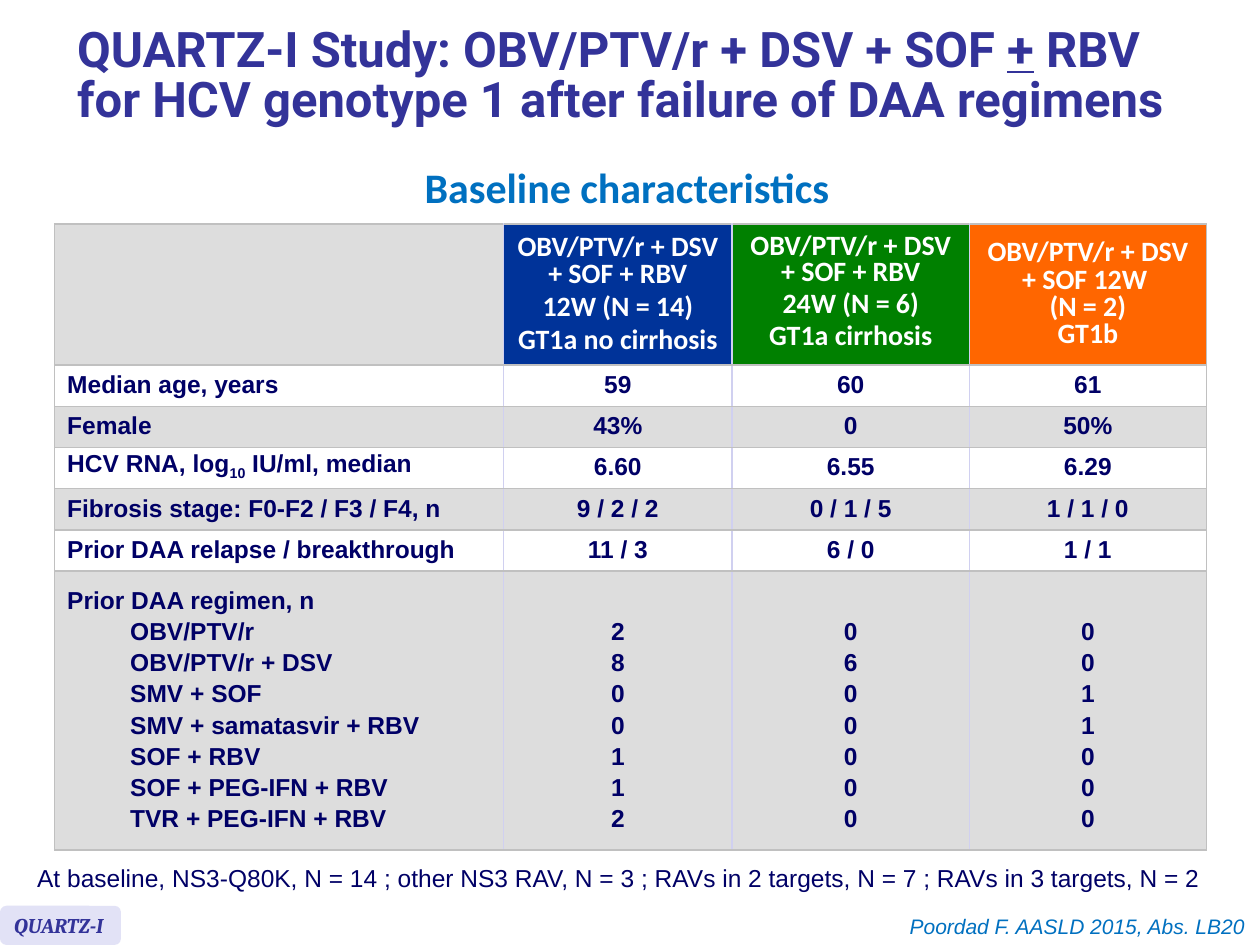
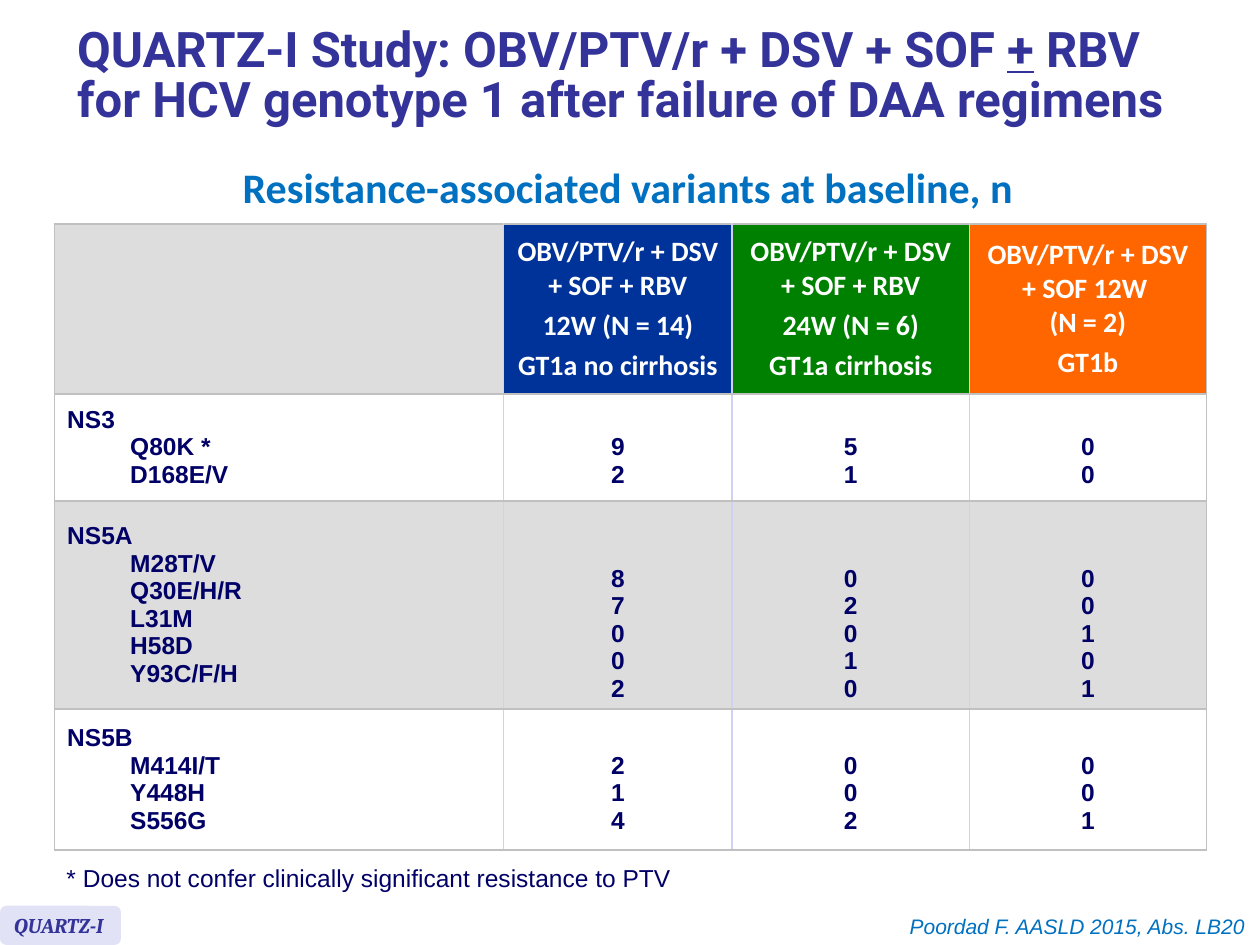
from lxml import etree
from pptx import Presentation
from pptx import util as u
from pptx.dml.color import RGBColor
from pptx.enum import shapes, text
from pptx.oxml.ns import qn

Cm, Pt = u.Cm, u.Pt
LEFT, CENTER, RIGHT = text.PP_ALIGN.LEFT, text.PP_ALIGN.CENTER, text.PP_ALIGN.RIGHT
TOP, MIDDLE, BOTTOM = text.MSO_ANCHOR.TOP, text.MSO_ANCHOR.MIDDLE, text.MSO_ANCHOR.BOTTOM

# Colours
INDIGO = RGBColor(0x33, 0x33, 0x99)
SKY = RGBColor(0x00, 0x70, 0xC0)
NAVY = RGBColor(0x00, 0x00, 0x66)
LILAC = RGBColor(0xE2, 0xE2, 0xF6)
WHITE = RGBColor(0xFF, 0xFF, 0xFF)
GREY = RGBColor(0xDD, 0xDD, 0xDD)
ARM_COLOURS = [RGBColor(0x00, 0x33, 0x99), RGBColor(0x00, 0x80, 0x00), RGBColor(0xFF, 0x66, 0x00)]
OUTER_RULE, INNER_RULE = "C0C0C0", "D0D0F0"

# Shared content; a paragraph is a string or a list of runs, a run a string or (string, format)
TITLE = [["QUARTZ-I Study: OBV/PTV/r + DSV + SOF ", ("+", {"underline": True}),
          " RBV \nfor HCV genotype 1 after failure of DAA regimens"]]
STUDY = "QUARTZ-I"
CITATION = "Poordad F. AASLD 2015, Abs. LB20"
ARMS = [
    ["OBV/PTV/r + DSV + SOF + RBV", "12W (N = 14)", "GT1a no cirrhosis"],
    ["OBV/PTV/r + DSV + SOF + RBV", "24W (N = 6)", "GT1a cirrhosis"],
]

# Table rows: label, sub-labels, then one list of values for each arm
SLIDES = [
    {
        "heading": "Baseline characteristics", "heading_at": (8.26, 8.76),
        "arms": ARMS + [["OBV/PTV/r + DSV + SOF 12W \n(N = 2)\nGT1b"]],
        "arm_spacing": [0.8, Pt(15), 0.8],
        "row_spacing": Pt(15), "row_gap": Pt(2.8), "line_height": 0.63,
        "heights": [2.84] + [0.83] * 5,
        "rows": [
            ("Median age, years", [], [["59"], ["60"], ["61"]]),
            ("Female", [], [["43%"], ["0"], ["50%"]]),
            (["HCV RNA, log", ("10", {"baseline": -25000}), " IU/ml, median"], [],
             [["6.60"], ["6.55"], ["6.29"]]),
            ("Fibrosis stage: F0-F2 / F3 / F4, n", [], [["9 / 2 / 2"], ["0 / 1 / 5"], ["1 / 1 / 0"]]),
            ("Prior DAA relapse / breakthrough", [], [["11 / 3"], ["6 / 0"], ["1 / 1"]]),
            ("Prior DAA regimen, n",
             ["OBV/PTV/r", "OBV/PTV/r + DSV", "SMV + SOF", "SMV + samatasvir + RBV",
              "SOF + RBV", "SOF + PEG-IFN + RBV", "TVR + PEG-IFN + RBV"],
             ["2800112", "0600000", "0011000"]),
        ],
        "bottom_rows": [],
        "note": "At baseline, NS3-Q80K, N = 14 ; other NS3 RAV, N = 3 ; "
                "RAVs in 2 targets, N = 7 ; RAVs in 3 targets, N = 2",
        "note_at": (0.5, 24.4),
    },
    {
        "heading": "Resistance-associated variants at baseline, n", "heading_at": (4.52, 16.28),
        "arms": ARMS + [["OBV/PTV/r + DSV + SOF 12W \n(N = 2)", "GT1b"]],
        "arm_spacing": [1.0] * 3,
        "row_spacing": None, "row_gap": Pt(0), "line_height": 0.55,
        "heights": [3.42, 2.16, 4.19],
        "rows": [
            ("NS3", ["Q80K *", "D168E/V"], ["92", "51", "00"]),
            ("NS5A", ["M28T/V", "Q30E/H/R", "L31M", "H58D", "Y93C/F/H"], ["87002", "02010", "00101"]),
            ("NS5B", ["M414I/T", "Y448H", "S556G"], ["214", "002", "001"]),
        ],
        "bottom_rows": ["NS5A"],
        "note": "* Does not confer clinically significant resistance to PTV",
        "note_at": (1.09, 12.8),
    },
]

# Table geometry in cm
TABLE_LEFT, TABLE_TOP, TABLE_HEIGHT = 1.1, 4.52, 12.62
COLUMNS = [9.05, 4.61, 4.78, 4.78]
INSET_Y = 0.13


def write(frame, paragraphs, size=14, font="Arial", colour=NAVY, bold=False, italic=False,
          align=LEFT, anchor=TOP, spacing=None, gap=Pt(0), indented=0):
    """Fill a text frame; the last `indented` paragraphs go one level in."""
    frame.vertical_anchor = anchor
    for index, content in enumerate(paragraphs):
        para = frame.paragraphs[0] if index == 0 else frame.add_paragraph()
        if index >= len(paragraphs) - indented:
            para.level = 1
            props = para._p.get_or_add_pPr()
            props.set("marL", str(Cm(1.27)))
            props.set("indent", "0")
        para.alignment = align
        para.line_spacing = spacing
        para.space_before = gap if index else Pt(0)
        for piece in [content] if isinstance(content, str) else content:
            words, extra = (piece, {}) if isinstance(piece, str) else piece
            for number, line in enumerate(words.split("\n")):
                if number:
                    para.add_line_break()
                run = para.add_run()
                run.text = line
                run.font.size, run.font.name = Pt(size), font
                run.font.bold, run.font.italic = bold, italic
                run.font.color.rgb = colour
                run.font.underline = extra.get("underline")
                if "baseline" in extra:
                    run._r.get_or_add_rPr().set("baseline", str(extra["baseline"]))


def add_text(slide, left, top, width, height, words, wrap=False, **style):
    box = slide.shapes.add_textbox(Cm(left), Cm(top), Cm(width), Cm(height))
    box.text_frame.word_wrap = wrap
    write(box.text_frame, [words], **style)


def paint(cell, fill, column):
    """Fill a cell and rule its four sides."""
    cell.fill.solid()
    cell.fill.fore_color.rgb = fill
    left = OUTER_RULE if column == 0 else INNER_RULE
    right = OUTER_RULE if column == len(COLUMNS) - 1 else INNER_RULE
    sides = [("a:lnL", left), ("a:lnR", right), ("a:lnT", OUTER_RULE), ("a:lnB", OUTER_RULE)]
    for position, (side, colour) in enumerate(sides):
        rule = etree.Element(qn(side), w=str(Pt(1)))
        solid = etree.SubElement(rule, qn("a:solidFill"))
        etree.SubElement(solid, qn("a:srgbClr"), val=colour)
        cell._tc.get_or_add_tcPr().insert(position, rule)


def add_results(slide, data):
    heights = data["heights"] + [TABLE_HEIGHT - sum(data["heights"])]
    table = slide.shapes.add_table(len(heights), len(COLUMNS), Cm(TABLE_LEFT), Cm(TABLE_TOP),
                                   Cm(sum(COLUMNS)), Cm(TABLE_HEIGHT)).table
    table.first_row = table.horz_banding = False
    for column, width in zip(table.columns, COLUMNS):
        column.width = Cm(width)
    for row, height in zip(table.rows, heights):
        row.height = Cm(height)

    # Header: empty corner and one coloured cell per arm
    paint(table.cell(0, 0), GREY, 0)
    for column, (arm, fill, spacing) in enumerate(zip(data["arms"], ARM_COLOURS, data["arm_spacing"]), 1):
        cell = table.cell(0, column)
        paint(cell, fill, column)
        write(cell.text_frame, arm, size=16, font="Calibri", colour=WHITE, bold=True,
              align=CENTER, spacing=spacing, gap=Pt(3.2))
        cell.vertical_anchor = MIDDLE

    # Body: values start one line down where the label has sub-labels
    for row, (label, parts, arm_values) in enumerate(data["rows"], 1):
        for column, lines in enumerate([[label] + parts] + arm_values):
            cell = table.cell(row, column)
            paint(cell, WHITE if row % 2 else GREY, column)
            write(cell.text_frame, lines, bold=True, align=CENTER if column else LEFT,
                  spacing=data["row_spacing"], gap=data["row_gap"],
                  indented=0 if column else len(parts))
            cell.margin_top = Cm(INSET_Y + (data["line_height"] if column and parts else 0))
            cell.margin_bottom = Cm(INSET_Y)
            cell.vertical_anchor = BOTTOM if column and label in data["bottom_rows"] else MIDDLE


def add_frame(slide):
    """Title, citation and study badge found on every slide."""
    title = slide.shapes.title
    title.left, title.top, title.width, title.height = Cm(1.3), Cm(0.2), Cm(24.03), Cm(2.72)
    title.text_frame.auto_size = text.MSO_AUTO_SIZE.NONE
    write(title.text_frame, TITLE, size=28, font="Roboto", colour=INDIGO, bold=True,
          anchor=MIDDLE, spacing=0.85)

    add_text(slide, 18.01, 18.29, 7.34, 0.76, CITATION, size=12, colour=SKY, italic=True, align=RIGHT)

    badge = slide.shapes.add_shape(shapes.MSO_SHAPE.ROUNDED_RECTANGLE,
                                   Cm(0), Cm(18.26), Cm(2.44), Cm(0.79))
    badge.shadow.inherit = False
    badge.fill.solid()
    badge.fill.fore_color.rgb = LILAC
    badge.line.fill.background()
    badge.text_frame.word_wrap = False
    write(badge.text_frame, [STUDY], size=12, font="Cambria", colour=INDIGO, bold=True,
          italic=True, anchor=MIDDLE)


def main():
    deck = Presentation()
    deck.slide_width, deck.slide_height = Cm(25.4), Cm(19.05)
    for data in SLIDES:
        slide = deck.slides.add_slide(deck.slide_layouts[5])
        add_results(slide, data)
        left, width = data["heading_at"]
        add_text(slide, left, 3.61, width, 0.89, data["heading"], size=24, font="Calibri",
                 colour=SKY, bold=True, align=CENTER, spacing=Pt(15.2))
        add_frame(slide)
        left, width = data["note_at"]
        add_text(slide, left, 17.27, width, 0.86, data["note"], wrap=True)
    deck.save("out.pptx")


if __name__ == "__main__":
    main()
